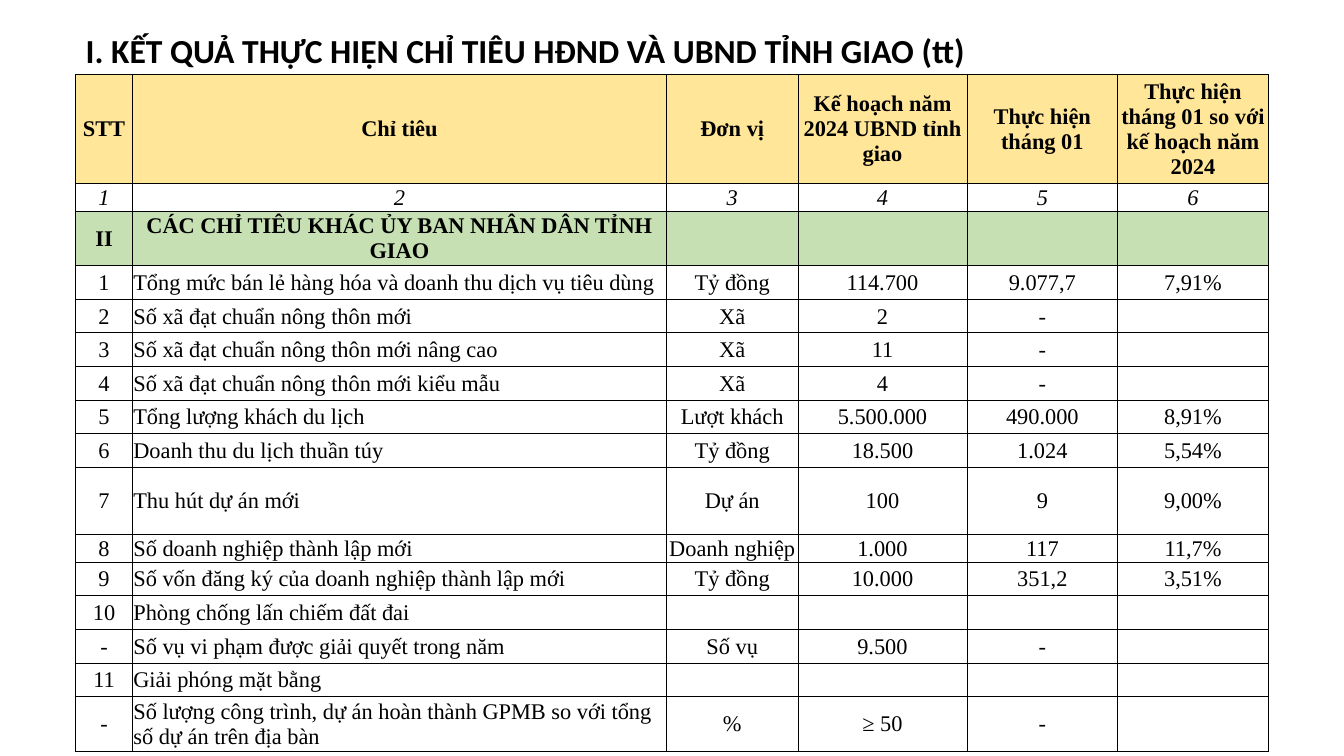
from dataclasses import dataclass
from typing import Optional

from lxml import etree
from pptx import Presentation
from pptx.dml.color import RGBColor
from pptx.enum.text import MSO_ANCHOR, MSO_AUTO_SIZE, PP_ALIGN
from pptx.oxml.ns import qn
from pptx.util import Pt

LEFT, CENTER = PP_ALIGN.LEFT, PP_ALIGN.CENTER
TOP, MIDDLE = MSO_ANCHOR.TOP, MSO_ANCHOR.MIDDLE
FIT_SHAPE = MSO_AUTO_SIZE.SHAPE_TO_FIT_TEXT

BLACK = RGBColor(0x00, 0x00, 0x00)
YELLOW = RGBColor(0xFF, 0xE6, 0x99)
GREEN = RGBColor(0xC6, 0xE0, 0xB4)

TITLE_FONT = {"name": "Calibri", "size": Pt(24), "bold": True}
BODY_FONT = {"name": "Times New Roman", "size": Pt(16), "bold": False, "italic": False}
BOLD_FONT = BODY_FONT | {"bold": True}
ITALIC_FONT = BODY_FONT | {"italic": True}
CELL_FORMAT = {
    "vertical_anchor": MIDDLE,
    "margin_left": Pt(0.7),
    "margin_right": Pt(0.7),
    "margin_top": Pt(0.7),
    "margin_bottom": Pt(0),
}

TABLE_LEFT, TABLE_TOP = 54, 53.3
COL_WIDTHS = (40.6, 381.5, 93.9, 120.8, 107.6, 107.6)
INDICATOR_COL = 1
BORDER_WIDTH = Pt(0.5)
LOW, NORMAL, TALL = 19.7, 24, 48


@dataclass
class Row:
    texts: tuple[str, ...]
    height: float = NORMAL
    font: Optional[dict] = None
    fill: Optional[RGBColor] = None


ROWS = [
    Row(("STT", "Chỉ tiêu", "Đơn vị", "Kế hoạch năm 2024 UBND tỉnh giao",
         "Thực hiện tháng 01", "Thực hiện tháng 01 so với kế hoạch năm 2024"),
        77, BOLD_FONT, YELLOW),
    Row(("1", "2", "3", "4", "5", "6"), LOW, ITALIC_FONT),
    Row(("II", "CÁC CHỈ TIÊU KHÁC ỦY BAN NHÂN DÂN TỈNH GIAO", "", "", "", ""),
        38.6, BOLD_FONT, GREEN),
    Row(("1", "Tổng mức bán lẻ hàng hóa và doanh thu dịch vụ tiêu dùng",
         "Tỷ đồng", "114.700", "9.077,7", "7,91%")),
    Row(("2", "Số xã đạt chuẩn nông thôn mới", "Xã", "2", "-", "")),
    Row(("3", "Số xã đạt chuẩn nông thôn mới nâng cao", "Xã", "11", "-", "")),
    Row(("4", "Số xã đạt chuẩn nông thôn mới kiểu mẫu", "Xã", "4", "-", "")),
    Row(("5", "Tổng lượng khách du lịch", "Lượt khách", "5.500.000", "490.000", "8,91%")),
    Row(("6", "Doanh thu du lịch thuần túy", "Tỷ đồng", "18.500", "1.024", "5,54%")),
    Row(("7", "Thu hút dự án mới", "Dự án", "100", "9", "9,00%"), TALL),
    Row(("8", "Số doanh nghiệp thành lập mới", "Doanh nghiệp", "1.000", "117", "11,7%"), LOW),
    Row(("9", "Số vốn đăng ký của doanh nghiệp thành lập mới",
         "Tỷ đồng", "10.000", "351,2", "3,51%")),
    Row(("10", "Phòng chống lấn chiếm đất đai", "", "", "", "")),
    Row(("-", "Số vụ vi phạm được giải quyết trong năm", "Số vụ", "9.500", "-", "")),
    Row(("11", "Giải phóng mặt bằng", "", "", "", "")),
    Row(("-", "Số lượng công trình, dự án hoàn thành GPMB so với tổng số dự án trên địa bàn",
         "%", "≥ 50", "-", ""), 39),
]


def apply(target, values: dict) -> None:
    """Set each attribute of target named in values."""
    for name, value in values.items():
        setattr(target, name, value)


def write(tf, text: str, font: dict, align: PP_ALIGN) -> None:
    p = tf.paragraphs[0]
    p.alignment = align
    r = p.add_run()
    r.text = text
    apply(r.font, font)
    r.font.color.rgb = BLACK


def add_borders(cell) -> None:
    tc_pr = cell._tc.get_or_add_tcPr()
    for side in ("lnL", "lnR", "lnT", "lnB"):
        ln = etree.SubElement(tc_pr, qn(f"a:{side}"), w=str(BORDER_WIDTH))
        fill = etree.SubElement(ln, qn("a:solidFill"))
        etree.SubElement(fill, qn("a:srgbClr"), val=str(BLACK))


def format_title(sp) -> None:
    apply(sp, {"left": Pt(54), "top": Pt(18), "width": Pt(814.3), "height": Pt(36)})
    tf = sp.text_frame
    apply(tf, {"word_wrap": True, "auto_size": FIT_SHAPE, "vertical_anchor": TOP})
    write(tf, "I. KẾT QUẢ THỰC HIỆN CHỈ TIÊU HĐND VÀ UBND TỈNH GIAO (tt)", TITLE_FONT, LEFT)


def fill_row(table, index: int, row: Row) -> None:
    table.rows[index].height = Pt(row.height)
    for col, text in enumerate(row.texts):
        cell = table.cell(index, col)
        apply(cell, CELL_FORMAT)
        add_borders(cell)
        if row.fill is None:
            cell.fill.background()
        else:
            cell.fill.solid()
            cell.fill.fore_color.rgb = row.fill
        if text:
            is_label = col == INDICATOR_COL and row.font is None
            write(cell.text_frame, text, row.font or BODY_FONT, LEFT if is_label else CENTER)


def add_indicator_table(s) -> None:
    height = sum(row.height for row in ROWS)
    table = s.shapes.add_table(
        len(ROWS), len(COL_WIDTHS), Pt(TABLE_LEFT), Pt(TABLE_TOP),
        Pt(sum(COL_WIDTHS)), Pt(height)).table
    apply(table, {"first_row": False, "horz_banding": False})
    for column, width in zip(table.columns, COL_WIDTHS):
        column.width = Pt(width)
    for index, row in enumerate(ROWS):
        fill_row(table, index, row)


def main() -> None:
    prs = Presentation()
    prs.slide_width, prs.slide_height = Pt(960), Pt(540)
    s = prs.slides.add_slide(prs.slide_layouts.get_by_name("Title Only"))
    format_title(s.shapes.title)
    add_indicator_table(s)
    prs.save("out.pptx")


if __name__ == "__main__":
    main()
